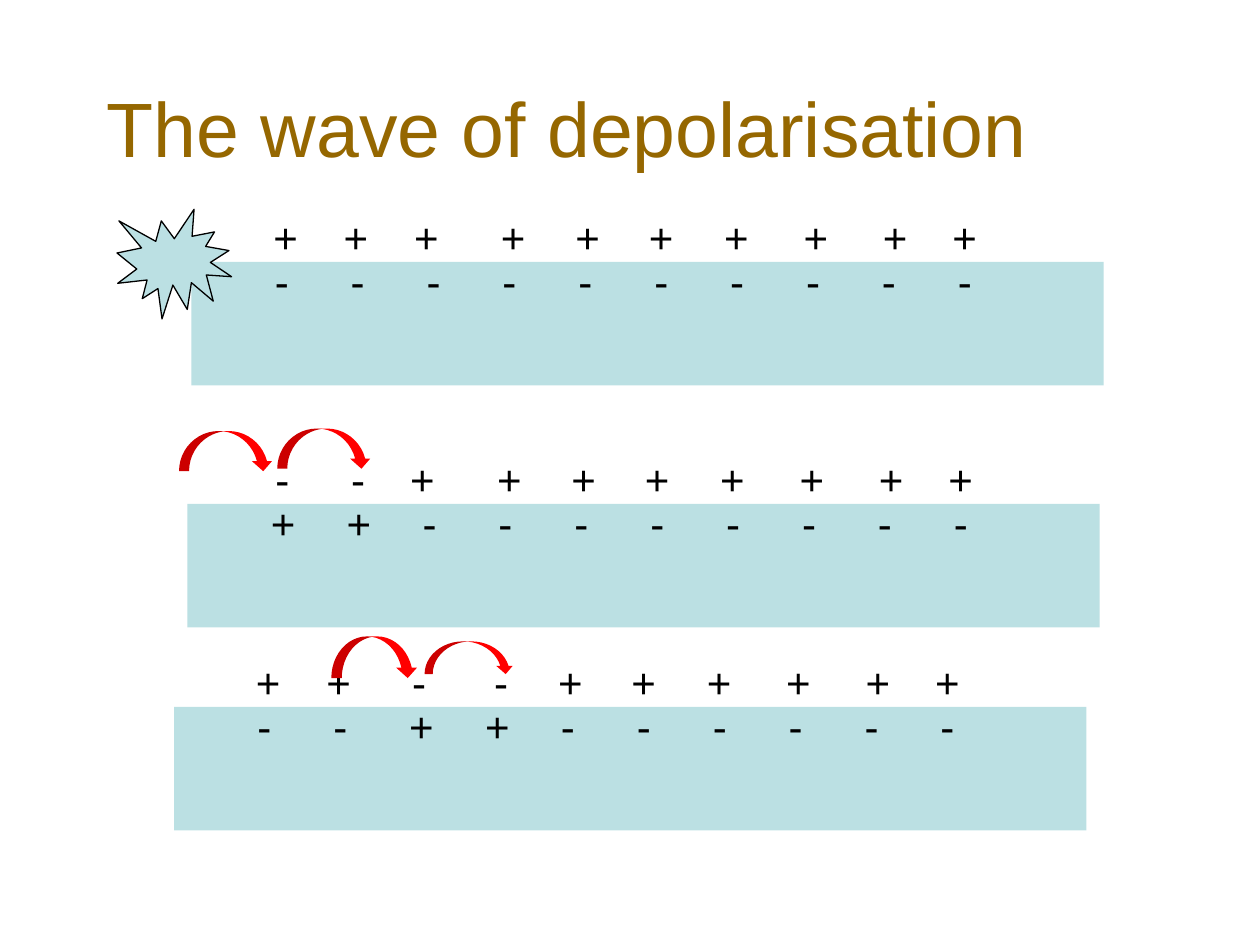
from pptx import Presentation
from pptx.dml.color import RGBColor
from pptx.enum.shapes import MSO_SHAPE
from pptx.enum.text import MSO_ANCHOR, MSO_AUTO_SIZE, PP_ALIGN
from pptx.util import Cm, Pt

BLACK = RGBColor(0x00, 0x00, 0x00)
BROWN = RGBColor(0x95, 0x67, 0x00)
PALE_BLUE = RGBColor(0xBB, 0xE0, 0xE3)
RED = RGBColor(0xFF, 0x00, 0x00)


def add_filled(shapes, preset, left, top, width, height, color):
    shape = shapes.add_shape(preset, Cm(left), Cm(top), Cm(width), Cm(height))
    shape.shadow.inherit = False
    shape.fill.solid()
    shape.fill.fore_color.rgb = color
    shape.line.fill.background()
    return shape


def add_charge(shapes, sign, left, top, width):
    charge = shapes.add_textbox(Cm(left), Cm(top), Cm(width), Cm(1.27))
    frame = charge.text_frame
    frame.word_wrap = True
    frame.auto_size = MSO_AUTO_SIZE.SHAPE_TO_FIT_TEXT
    paragraph = frame.paragraphs[0]
    paragraph.text = sign
    paragraph.font.size = Pt(24)
    paragraph.font.name = "Arial"
    paragraph.font.color.rgb = BLACK


prs = Presentation()
prs.slide_width, prs.slide_height = Cm(25.4), Cm(19.05)
slide = prs.slides.add_slide(prs.slide_layouts[5])

# Title
title = slide.shapes.title
title.left, title.top, title.width, title.height = Cm(1.9), Cm(1.07), Cm(21.59), Cm(2.54)
title.text_frame.auto_size = MSO_AUTO_SIZE.NONE
title.text_frame.vertical_anchor = MSO_ANCHOR.BOTTOM
heading = title.text_frame.paragraphs[0]
heading.text = "The wave of depolarisation"
heading.alignment = PP_ALIGN.LEFT
heading.font.size = Pt(44)
heading.font.name = "Arial"
heading.font.color.rgb = BROWN

# Cell membranes: left, top, charges outside, charges inside, shifted outer columns
membranes = [
    (3.86, 5.28, "++++++++++", "----------", {}),
    (3.78, 10.16, "--++++++++", "++--------", {0: 1.52, 1: 3.05}),
    (3.51, 14.25, "++--++++++", "--++------", {2: 4.55, 3: 6.2}),
]
outer_columns = [1.4, 2.82, 4.24, 5.99, 7.49, 8.97, 10.49, 12.09, 13.69, 15.09]
inner_start, inner_pitch = 1.43, 1.53
outer_widths = {"+": 1.09, "-": 0.79}
inner_widths = {"+": 1.02, "-": 2.16}

for left, top, outside, inside, shifted in membranes:
    membrane = slide.shapes.add_group_shape().shapes
    add_filled(membrane, MSO_SHAPE.RECTANGLE, left, top, 18.39, 2.49, PALE_BLUE)
    for i, sign in enumerate(inside):
        add_charge(membrane, sign, left + inner_start + i * inner_pitch,
                   top - 0.25, inner_widths[sign])
    for i, sign in enumerate(outside):
        add_charge(membrane, sign, left + shifted.get(i, outer_columns[i]),
                   top - 1.14, outer_widths[sign])

# Stimulus
stimulus = add_filled(slide.shapes, MSO_SHAPE.EXPLOSION1, 2.36, 4.22, 2.31, 2.21, PALE_BLUE)
stimulus.line.color.rgb = BLACK
stimulus.line.width = Pt(0.75)

# Spread of the wave
wave_arrows = [
    (3.61, 8.69, 1.9, 0.81),
    (5.59, 8.64, 1.9, 0.81),
    (8.56, 12.93, 1.8, 0.66),
    (6.68, 12.83, 1.75, 0.84),
]
for left, top, width, height in wave_arrows:
    add_filled(slide.shapes, MSO_SHAPE.CURVED_DOWN_ARROW, left, top, width, height, RED)

prs.save("out.pptx")
